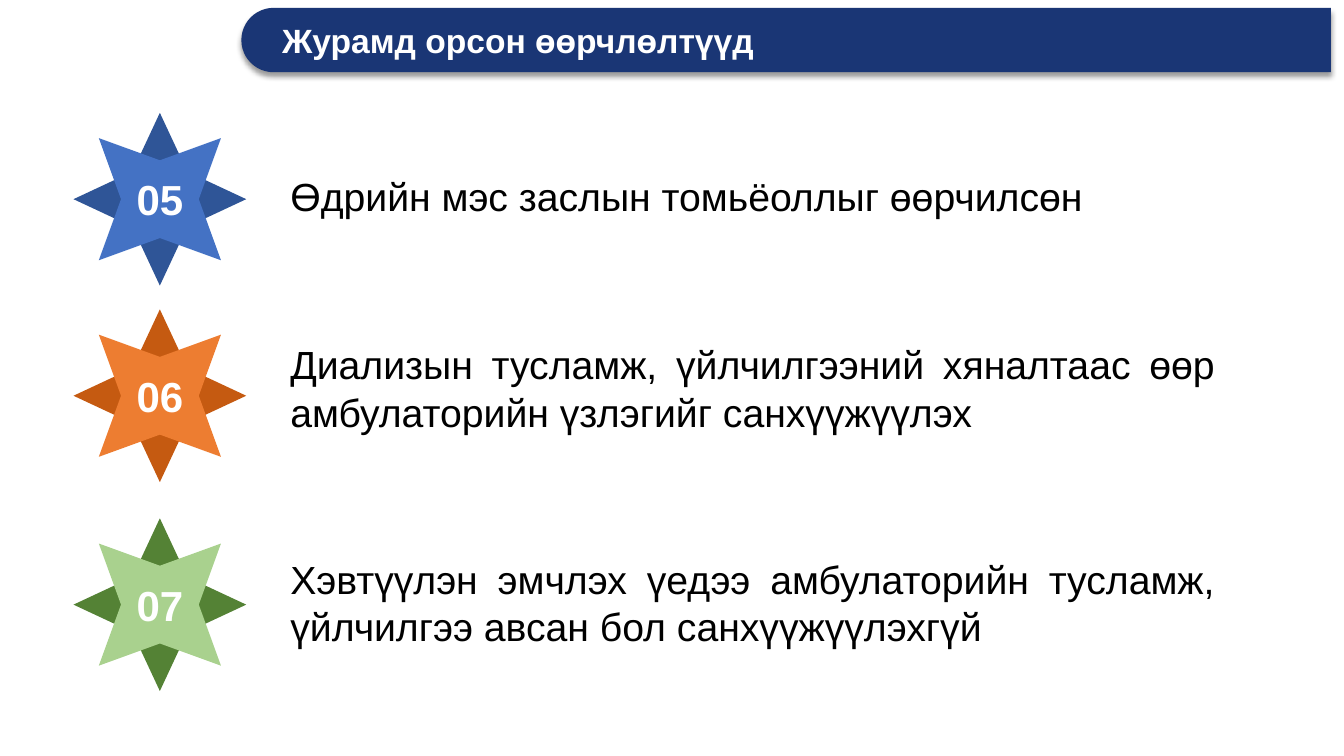
from lxml import etree
from pptx import Presentation
from pptx.dml.color import RGBColor
from pptx.enum.shapes import MSO_SHAPE
from pptx.enum.text import MSO_ANCHOR, PP_ALIGN
from pptx.oxml.ns import qn
from pptx.util import Pt

STAR = MSO_SHAPE.STAR_4_POINT
ROUND_TOP = MSO_SHAPE.ROUND_2_SAME_RECTANGLE
MIDDLE, TOP = MSO_ANCHOR.MIDDLE, MSO_ANCHOR.TOP
LEFT, CENTER, JUSTIFY = PP_ALIGN.LEFT, PP_ALIGN.CENTER, PP_ALIGN.JUSTIFY
STAR_LEFT, STAR_SIZE = 52.5, 123.4
TEXT_LEFT, TEXT_WIDTH = 203.8, 667.4

ITEMS = [
    dict(number="05", text="Өдрийн мэс заслын томьёоллыг өөрчилсөн",
         dark="2F5597", light="4472C4", star_top=80.6, text_top=107.3,
         height=48.2, style=dict(anchor=MIDDLE, spacing=1.5)),
    dict(number="06", text="Диализын тусламж, үйлчилгээний хяналтаас өөр амбулаторийн үзлэгийг санхүүжүүлэх",
         dark="C55A11", light="ED7D31", star_top=221, text_top=241.2,
         height=71.3, style=dict(align=JUSTIFY)),
    dict(number="07", text="Хэвтүүлэн эмчлэх үедээ амбулаторийн тусламж, үйлчилгээ авсан бол санхүүжүүлэхгүй",
         dark="548235", light="A9D18E", star_top=370.2, text_top=394.6,
         height=71.3, style=dict(align=JUSTIFY)),
]


def color(value):
    """Turn a hex string into a colour."""
    return RGBColor.from_string(value)


def add_shape(page, kind, left, top, width, height, fill, adjustments, rotation=0):
    """Add a filled preset shape without outline or shadow."""
    shape = page.shapes.add_shape(kind, Pt(left), Pt(top), Pt(width), Pt(height))
    shape.fill.solid()
    shape.fill.fore_color.rgb = color(fill)
    shape.line.fill.background()
    shape.shadow.inherit = False
    shape.rotation = rotation
    for index, value in enumerate(adjustments):
        shape.adjustments[index] = value
    return shape


def add_text(page, text, left, top, width, height, size=28, fill="000000", bold=False,
             align=LEFT, anchor=TOP, spacing=None, inset=(3.6, 2.2), wrap=True):
    """Add a text box holding one formatted paragraph."""
    box = page.shapes.add_textbox(Pt(left), Pt(top), Pt(width), Pt(height))
    frame = box.text_frame
    frame.word_wrap = wrap
    frame.vertical_anchor = anchor
    frame.margin_left = frame.margin_right = Pt(inset[0])
    frame.margin_top = frame.margin_bottom = Pt(inset[1])
    para = frame.paragraphs[0]
    para.alignment = align
    if spacing:
        para.line_spacing = spacing
    span = para.add_run()
    span.text = text
    span.font.name = "Arial"
    span.font.size = Pt(size)
    span.font.bold = bold
    span.font.color.rgb = color(fill)


def add_drop_shadow(shape, fill="000000", opacity=40, blur=4, distance=3):
    """Cast a soft shadow straight down from a shape."""
    effects = shape._element.spPr.find(qn("a:effectLst"))
    shadow = etree.SubElement(effects, qn("a:outerShdw"), blurRad=str(Pt(blur)),
                              dist=str(Pt(distance)), dir="5400000", rotWithShape="0")
    tint = etree.SubElement(shadow, qn("a:srgbClr"), val=fill)
    etree.SubElement(tint, qn("a:alpha"), val=str(opacity * 1000))


def add_banner(page, title, left, top, width, height):
    """Draw the title bar with its rounded left end."""
    bar = add_shape(page, ROUND_TOP, left + (width - height) / 2, top + (height - width) / 2,
                    height, width, "1A3675", [0.5, 0], rotation=270)
    add_drop_shadow(bar)
    add_text(page, title, left + 22, top + 1.6, width - 32, height, size=24, fill="FFFFFF",
             bold=True, anchor=MIDDLE, spacing=0.9, inset=(7.2, 3.6))


def add_badge(page, number, left, top, size, dark, light):
    """Draw two crossed stars with a number in the middle."""
    for fill, rotation in ((dark, 0), (light, 45)):
        add_shape(page, STAR, left, top, size, size, fill, [0.225], rotation)
    width, height = 48, 44
    add_text(page, number, left + (size - width) / 2, top + (size - height) / 2, width, height,
             size=30, fill="FFFFFF", bold=True, align=CENTER, anchor=MIDDLE,
             inset=(7.2, 3.6), wrap=False)


def add_item(page, number, text, dark, light, star_top, text_top, height, style):
    """Place a numbered badge and the statement beside it."""
    add_badge(page, number, STAR_LEFT, star_top, STAR_SIZE, dark, light)
    add_text(page, text, TEXT_LEFT, text_top, TEXT_WIDTH, height, **style)


def main():
    """Build the slide and save the deck."""
    deck = Presentation()
    deck.slide_width, deck.slide_height = Pt(960), Pt(540)
    page = deck.slides.add_slide(deck.slide_layouts[6])
    add_banner(page, "Журамд орсон өөрчлөлтүүд", 172.4, 5.6, 778.3, 46)
    for item in ITEMS:
        add_item(page, **item)
    deck.save("out.pptx")


if __name__ == "__main__":
    main()
